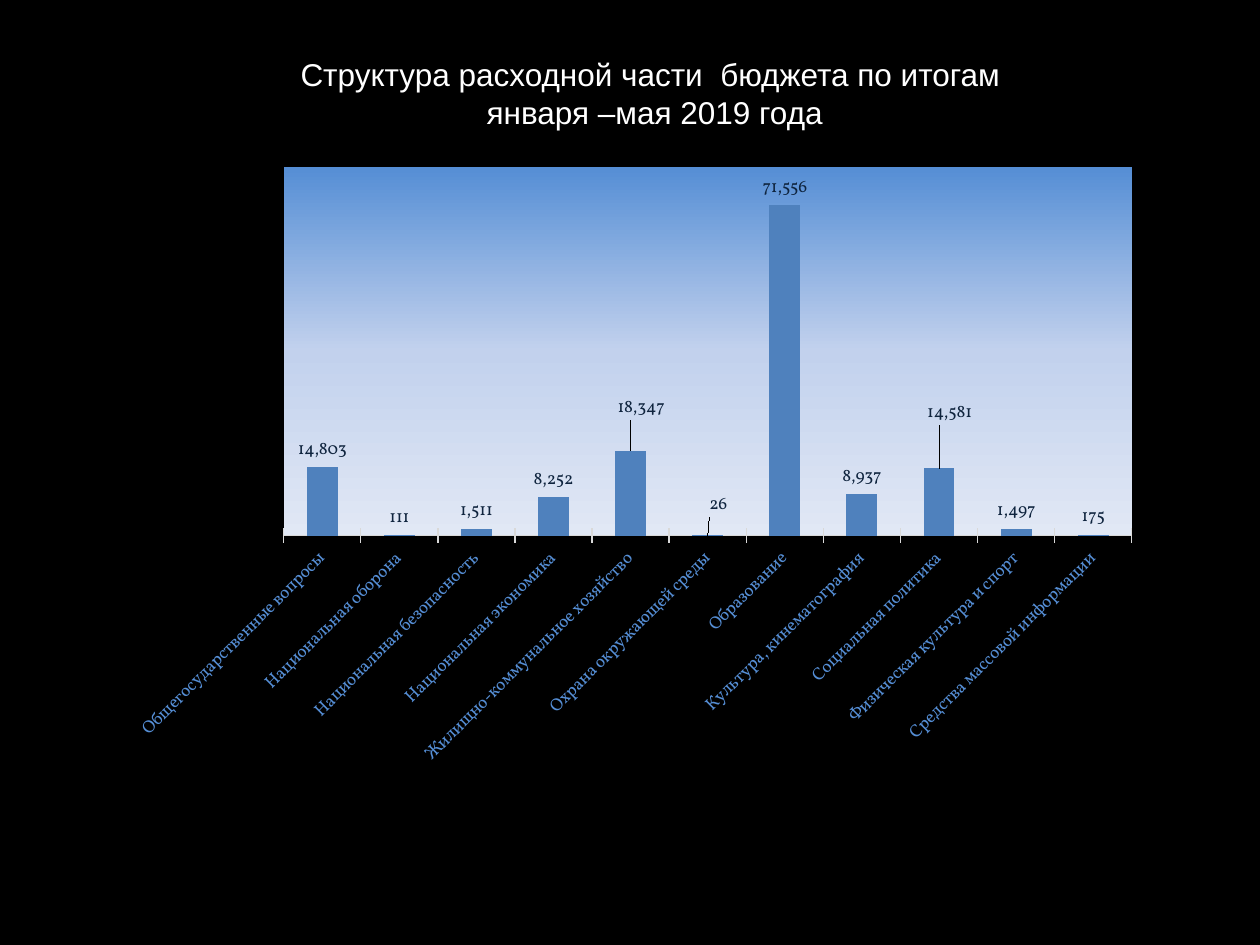
from lxml import etree
from pptx import Presentation
from pptx.chart.data import CategoryChartData
from pptx.dml.color import RGBColor
from pptx.enum.chart import XL_CHART_TYPE as CT, XL_LABEL_POSITION as LP, XL_TICK_MARK as TM
from pptx.enum.text import MSO_AUTO_SIZE as AS, PP_ALIGN as AL
from pptx.oxml import parse_xml
from pptx.oxml.ns import nsdecls
from pptx.util import Cm, Pt


def rgb(color):
    return RGBColor.from_string(color)


def manual_layout(x, y, w=None, h=None):
    """Chart layout: an offset for a label, or the inner frame of the plot."""
    parts = [("x", x), ("y", y)]
    if w is not None:
        parts = [("layoutTarget", "inner"), ("xMode", "edge"), ("yMode", "edge"),
                 *parts, ("w", w), ("h", h)]
    body = "".join(f'<c:{tag} val="{val}"/>' for tag, val in parts)
    return parse_xml(f'<c:layout {nsdecls("c")}><c:manualLayout>{body}</c:manualLayout></c:layout>')


prs = Presentation()
prs.slide_width, prs.slide_height = Cm(25.4), Cm(19.05)
s = prs.slides.add_slide(prs.slide_layouts[6])
s.background.fill.solid()
s.background.fill.fore_color.rgb = rgb("000000")

# Title
tf = s.shapes.add_textbox(Cm(3.18), Cm(0.99), Cm(20.04), Cm(1.8)).text_frame
tf.word_wrap = True
tf.auto_size = AS.SHAPE_TO_FIT_TEXT
tf.text = "Структура расходной части  бюджета по итогам \nянваря –мая 2019 года"
for p in tf.paragraphs:
    p.alignment = AL.CENTER
    for r in p.runs:
        r.font.size, r.font.name = Pt(18), "Arial"
        r.font.color.rgb = rgb("FFFFFF")

# Spending by budget section
spending = {
    "Общегосударственные вопросы": 14803,
    "Национальная оборона": 111,
    "Национальная безопасность": 1511,
    "Национальная экономика": 8252,
    "Жилищно-коммунальное хозяйство": 18347,
    "Охрана окружающей среды": 26,
    "Образование": 71556,
    "Культура, кинематография": 8937,
    "Социальная политика": 14581,
    "Физическая культура и спорт": 1497,
    "Средства массовой информации": 175,
}
data = CategoryChartData(number_format="#,##0")
data.categories = list(spending)
data.add_series("Series 1", list(spending.values()))
chart = s.shapes.add_chart(CT.COLUMN_CLUSTERED, Cm(2.13), Cm(3.1), Cm(21.11), Cm(12.83), data).chart
chart.has_legend = False
chart.has_title = False
chart.font.size, chart.font.name = Pt(10), "Vollkorn"
chart.font.color.rgb = rgb("FFFFFF")

# Columns
plot = chart.plots[0]
plot.gap_width = 150
plot.vary_by_categories = False
series = plot.series[0]
series.format.fill.solid()
series.format.fill.fore_color.rgb = rgb("4F81BD")

# Axes
cat = chart.category_axis
cat.major_tick_mark = TM.CROSS
cat.format.line.color.rgb = rgb("D9D9D9")
cat.format.line.width = Pt(0.75)
cat.tick_labels.font.size, cat.tick_labels.font.name = Pt(10), "Vollkorn"
cat.tick_labels.font.color.rgb = rgb("558ED5")
cat.tick_labels.offset = 100
cat._element.txPr.bodyPr.set("rot", "-2700000")
val = chart.value_axis
val.minimum_scale, val.maximum_scale = 0, 80000
val.has_major_gridlines = False
val.visible = False

# Value labels, three of them moved off their columns
labels = series.data_labels
labels.show_value = True
labels.number_format, labels.number_format_is_linked = "#,##0", False
labels.position = LP.OUTSIDE_END
offsets = {4: (0.01, -0.04), 5: (0.01, -0.02), 8: (0.01, -0.06)}
moved = [series.points[i].data_label for i in offsets]
for label in moved:
    label.position = LP.OUTSIDE_END
for label in [labels, *moved]:
    label.font.size, label.font.name = Pt(10), "Vollkorn"
    label.font.color.rgb = rgb("0F243E")
for node, offset in zip(chart._chartSpace.xpath(".//c:dLbl"), offsets.values()):
    node.insert(1, manual_layout(*offset))

# Plot frame and its gradient
area = chart._chartSpace.chart.plotArea
for old in area.xpath("c:layout"):
    area.remove(old)
area.insert(0, manual_layout(0.17, 0.02, 0.81, 0.58))
stops = [(0, "558ED5"), (50, "C2D1ED"), (100, "E1E8F5")]
gs = "".join(f'<a:gs pos="{pos * 1000}"><a:srgbClr val="{c}"/></a:gs>' for pos, c in stops)
area.append(parse_xml(
    f'<c:spPr {nsdecls("c", "a")}><a:gradFill><a:gsLst>{gs}</a:gsLst>'
    '<a:lin ang="5400000" scaled="0"/></a:gradFill></c:spPr>'))

prs.save("out.pptx")
